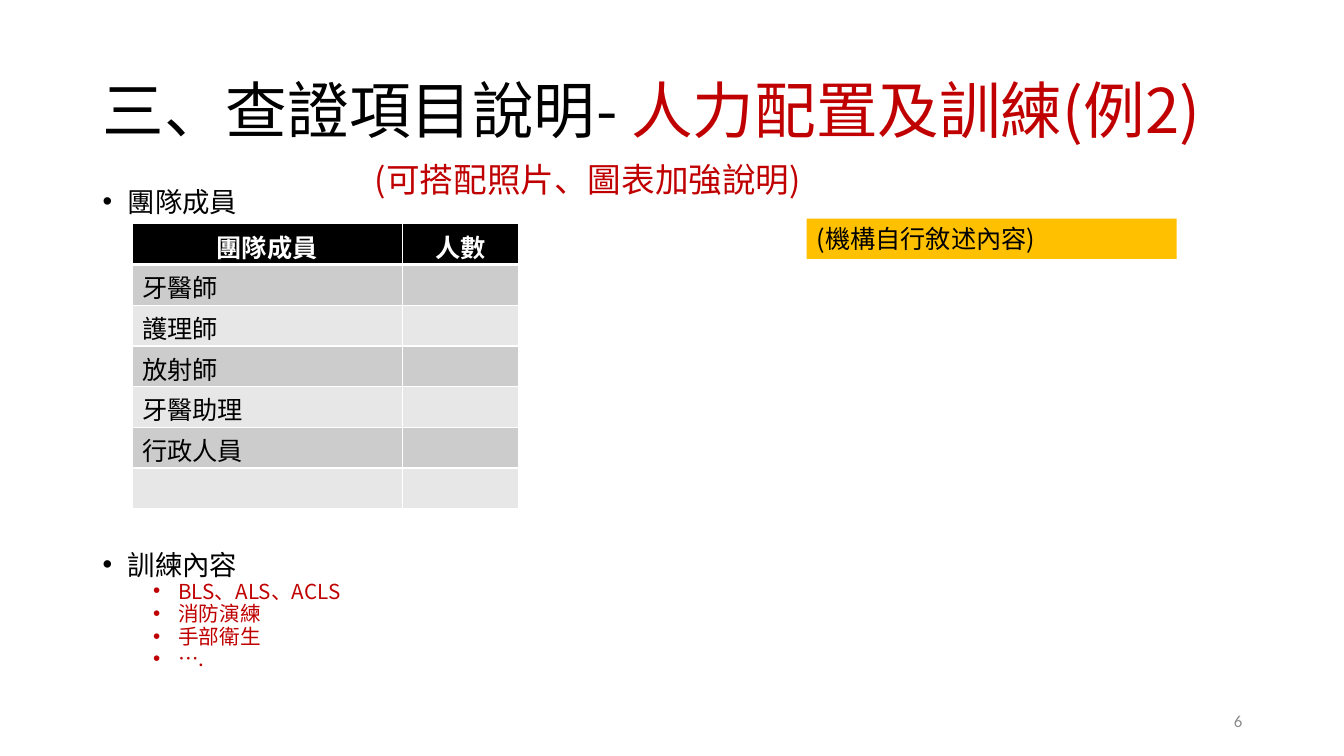
from lxml import etree
from pptx import Presentation
from pptx.dml.color import RGBColor
from pptx.enum.shapes import MSO_SHAPE
from pptx.enum.text import MSO_ANCHOR, PP_ALIGN
from pptx.oxml.ns import qn
from pptx.util import Inches, Pt

BLACK = RGBColor(0x00, 0x00, 0x00)
WHITE = RGBColor(0xFF, 0xFF, 0xFF)
RED = RGBColor(0xC0, 0x00, 0x00)
AMBER = RGBColor(0xFF, 0xC0, 0x00)
GRAY = RGBColor(0x8C, 0x8C, 0x8C)
BANDS = [RGBColor(0xCC, 0xCC, 0xCC), RGBColor(0xE7, 0xE7, 0xE7)]
CJK_FONT = "Noto Sans CJK SC"
RECTANGLE = MSO_SHAPE.RECTANGLE
TOP, MIDDLE = MSO_ANCHOR.TOP, MSO_ANCHOR.MIDDLE
LEFT, CENTER, RIGHT = PP_ALIGN.LEFT, PP_ALIGN.CENTER, PP_ALIGN.RIGHT

TEAM = ["牙醫師", "護理師", "放射師", "牙醫助理", "行政人員", ""]
TRAINING = ["BLS、ALS、ACLS", "消防演練", "手部衛生", "…."]


def style_font(font, size, color, name=CJK_FONT, bold=False):
    font.size = Pt(size)
    font.color.rgb = color
    font.bold = bold
    font.name = name


def add_text_box(page, box, anchor=TOP):
    frame = page.shapes.add_textbox(*map(Inches, box)).text_frame
    frame.word_wrap = True
    frame.vertical_anchor = anchor
    return frame


def add_line(page, box, text, size, color, anchor=TOP, align=LEFT, name=CJK_FONT):
    para = add_text_box(page, box, anchor).paragraphs[0]
    para.text = text
    para.alignment = align
    style_font(para.font, size, color, name)


def add_title(page, box):
    para = add_text_box(page, box, MIDDLE).paragraphs[0]
    para.line_spacing = 0.9
    for text, color in [("三、查證項目說明- ", BLACK), ("人力配置及訓練(例2)", RED)]:
        span = para.add_run()
        span.text = text
        style_font(span.font, 44, color)


def add_bullet(para, indent):
    properties = para._p.get_or_add_pPr()
    properties.set("marL", str(Inches(indent)))
    properties.set("indent", str(Inches(-0.25)))
    etree.SubElement(properties, qn("a:buFont")).set("typeface", "Arial")
    etree.SubElement(properties, qn("a:buChar")).set("char", "•")


def add_topic(page, box, heading, items=()):
    """Place a bulleted heading with red second-level items under it."""
    frame = add_text_box(page, box)
    for index, text in enumerate([heading, *items]):
        para = frame.add_paragraph() if index else frame.paragraphs[0]
        para.text = text
        para.line_spacing = 0.8
        if index:
            para.level = 1
            para.space_before = Pt(2)
        add_bullet(para, 0.75 if index else 0.25)
        style_font(para.font, 14.7 if index else 19.6, RED if index else BLACK)


def set_borders(cell, bottom_width):
    properties = cell._tc.get_or_add_tcPr()
    sides = [("L", 1), ("R", 1), ("T", 1), ("B", bottom_width)]
    for position, (side, width) in enumerate(sides):
        line = etree.Element(qn(f"a:ln{side}"), w=str(Pt(width)))
        fill = etree.SubElement(line, qn("a:solidFill"))
        etree.SubElement(fill, qn("a:srgbClr")).set("val", str(WHITE))
        properties.insert(position, line)


def add_team_table(page, box):
    rows = [("團隊成員", "人數")] + [(role, "") for role in TEAM]
    left, top, width, height = map(Inches, box)
    table = page.shapes.add_table(len(rows), 2, left, top, width, height).table
    table.columns[0].width = Inches(2.68)
    table.columns[1].width = width - Inches(2.68)
    for row_index, texts in enumerate(rows):
        is_header = row_index == 0
        for column_index, text in enumerate(texts):
            cell = table.cell(row_index, column_index)
            cell.margin_top, cell.margin_bottom = Inches(0.04), 0
            cell.fill.solid()
            cell.fill.fore_color.rgb = BLACK if is_header else BANDS[(row_index - 1) % 2]
            set_borders(cell, 3 if is_header else 1)
            para = cell.text_frame.paragraphs[0]
            para.text = text
            para.alignment = CENTER if is_header else LEFT
            style_font(para.font, 18, WHITE if is_header else BLACK, bold=is_header)


def add_note(page, box):
    note = page.shapes.add_shape(RECTANGLE, *map(Inches, box))
    note.shadow.inherit = False
    note.fill.solid()
    note.fill.fore_color.rgb = AMBER
    note.line.fill.background()
    note.text_frame.word_wrap = True
    para = note.text_frame.paragraphs[0]
    para.text = "(機構自行敘述內容)"
    para.alignment = LEFT
    style_font(para.font, 18, BLACK)


def build_staffing_page(page):
    add_title(page, (0.92, 0.4, 11.97, 1.45))
    add_topic(page, (0.92, 1.85, 4, 0.4), "團隊成員")
    add_topic(page, (0.92, 5.45, 11.84, 1.5), "訓練內容", TRAINING)
    add_line(page, (3.62, 1.53, 5.01, 0.5), "(可搭配照片、圖表加強說明)", 24, RED)
    add_team_table(page, (1.31, 2.22, 3.83, 2.83))
    add_note(page, (8, 2.17, 3.67, 0.4))
    add_line(page, (9.42, 6.95, 3, 0.4), "6", 12, GRAY, MIDDLE, RIGHT, "Calibri")


def main():
    deck = Presentation()
    deck.slide_width, deck.slide_height = Inches(13.33), Inches(7.5)
    build_staffing_page(deck.slides.add_slide(deck.slide_layouts[6]))
    deck.save("out.pptx")


if __name__ == "__main__":
    main()
